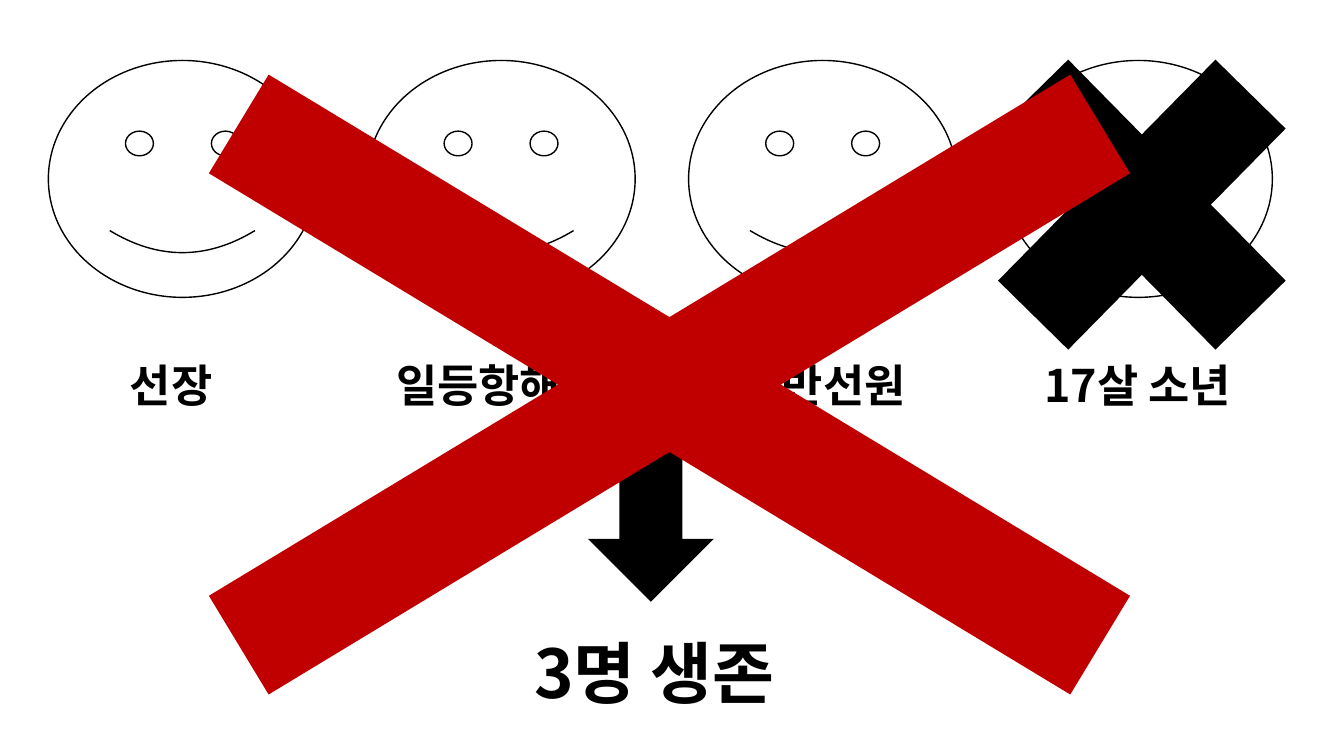
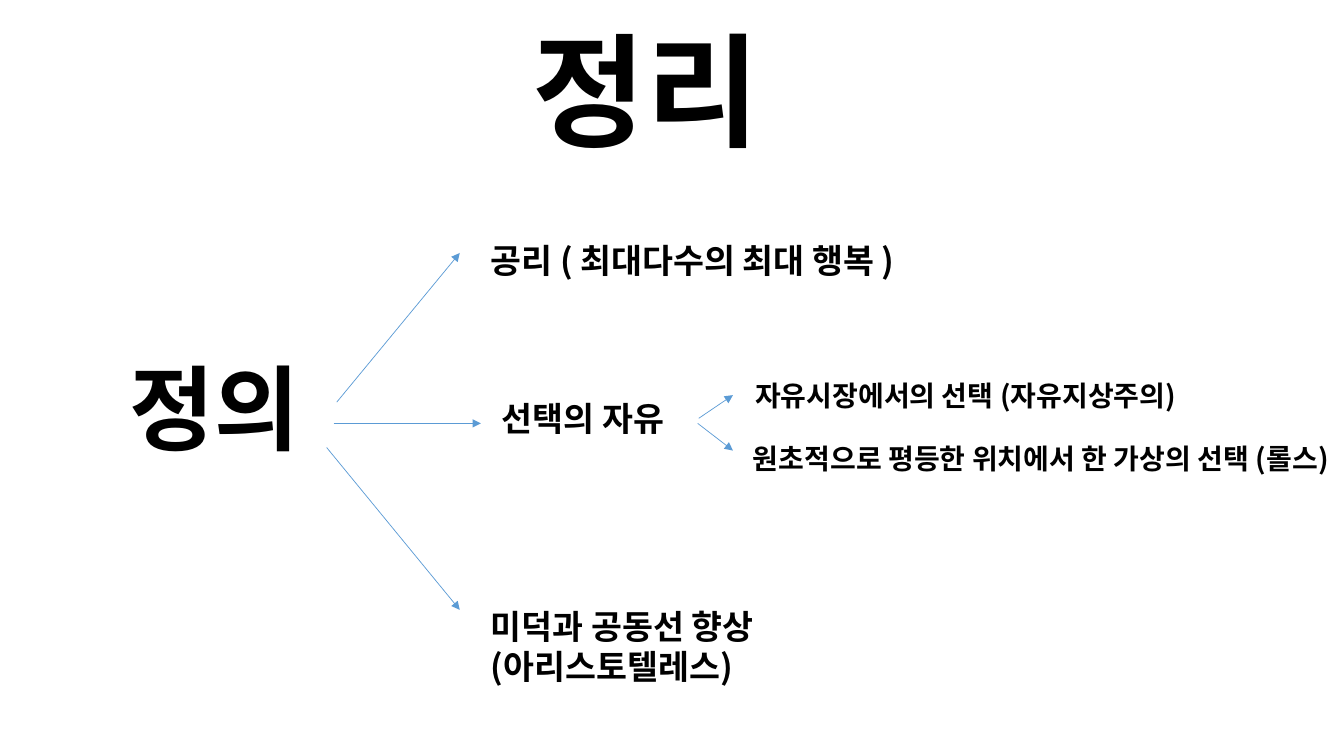
from dataclasses import dataclass

from lxml.etree import SubElement
from pptx import Presentation
from pptx.dml.color import RGBColor
from pptx.enum.shapes import MSO_CONNECTOR, MSO_SHAPE
from pptx.enum.text import MSO_ANCHOR, MSO_AUTO_SIZE, PP_ALIGN
from pptx.oxml.ns import qn
from pptx.util import Inches, Pt

COLORS = {"ink": "000000", "cross": "C00000", "arrow": "5B9BD5"}
FONT = "Noto Sans CJK KR"
TITLE_ONLY, BLANK = 5, 6


@dataclass(frozen=True)
class Box:
    left: float
    top: float
    width: float
    height: float

    def lengths(self) -> list[Inches]:
        return [Inches(value) for value in (self.left, self.top, self.width, self.height)]


@dataclass(frozen=True)
class Label:
    text: str
    box: Box
    size: int
    align: PP_ALIGN = PP_ALIGN.LEFT


@dataclass(frozen=True)
class Person:
    face_left: float
    label: Label


@dataclass(frozen=True)
class Arrow:
    start: tuple[float, float]
    end: tuple[float, float]


def name_label(text: str, left: float, width: float, align: PP_ALIGN = PP_ALIGN.LEFT) -> Label:
    return Label(text, Box(left, 3.5, width, 0.64), 32, align)


CREW = [
    Person(0.48, name_label("선장", 1.19, 1.64)),
    Person(3.64, name_label("일등항해사", 3.83, 2.61)),
    Person(6.83, name_label("일반선원", 7.08, 2.17, PP_ALIGN.CENTER)),
    Person(9.96, name_label("17살 소년", 10.26, 2.35)),
]
SURVIVORS = Label("3명 생존", Box(5.2, 6.21, 5.32, 0.91), 48)

SUMMARY = Label("정리", Box(0.66, 0.24, 11.5, 1.45), 88, PP_ALIGN.CENTER)
JUSTICE = Label("정의", Box(0.15, 3.56, 3.96, 1.22), 66, PP_ALIGN.CENTER)
VIEWS = [
    Label("공리 ( 최대다수의 최대 행복 )", Box(4.77, 2.33, 5.78, 0.5), 24),
    Label("선택의 자유", Box(4.88, 3.9, 2.42, 0.5), 24),
    Label("자유시장에서의 선택 (자유지상주의)", Box(7.39, 3.71, 5.32, 0.44), 20),
    Label("원초적으로 평등한 위치에서 한 가상의 선택 (롤스)", Box(7.37, 4.33, 5.96, 0.77), 20),
    Label("미덕과 공동선 향상 (아리스토텔레스)", Box(4.77, 5.96, 3.32, 0.91), 24),
]
BRANCHES = [
    Arrow((3.34, 3.99), (4.56, 2.51)),
    Arrow((3.31, 4.2), (4.77, 4.2)),
    Arrow((3.24, 4.44), (4.56, 6.05)),
    Arrow((6.93, 4.15), (7.27, 3.92)),
    Arrow((6.92, 4.2), (7.27, 4.47)),
]


def color(name: str) -> RGBColor:
    return RGBColor.from_string(COLORS[name])


def write_text(shape, label: Label):
    """Fill the shape with the label and return its paragraph."""
    frame = shape.text_frame
    frame.text = label.text
    frame.word_wrap = True
    para = frame.paragraphs[0]
    para.alignment = label.align
    for span in para.runs:
        span.font.size = Pt(label.size)
        span.font.bold = True
        span.font.color.rgb = color("ink")
        span.font.name = FONT
        # Korean glyphs take the East Asian typeface
        SubElement(span.font._element, qn("a:ea"), typeface=FONT)
    return para


def add_label(page, label: Label):
    return write_text(page.shapes.add_textbox(*label.box.lengths()), label)


def add_solid(page, kind: MSO_SHAPE, box: Box, fill: str):
    shape = page.shapes.add_shape(kind, *box.lengths())
    shape.shadow.inherit = False
    shape.fill.solid()
    shape.fill.fore_color.rgb = color(fill)
    shape.line.fill.background()
    return shape


def add_face(page, left: float) -> None:
    face = page.shapes.add_shape(MSO_SHAPE.SMILEY_FACE, *Box(left, 0.6, 2.66, 2.35).lengths())
    face.shadow.inherit = False
    face.fill.background()
    face.line.color.rgb = color("ink")
    face.line.width = Pt(1)


def add_arrow(page, arrow: Arrow) -> None:
    ends = [Inches(value) for value in (*arrow.start, *arrow.end)]
    connector = page.shapes.add_connector(MSO_CONNECTOR.STRAIGHT, *ends)
    connector.line.color.rgb = color("arrow")
    connector.line.width = Pt(0.5)
    properties = connector._element.spPr
    SubElement(properties.find(qn("a:ln")), qn("a:tailEnd"), type="triangle")
    SubElement(properties, qn("a:effectLst"))


def build_crew_page(deck) -> None:
    page = deck.slides.add_slide(deck.slide_layouts[BLANK])
    for person in CREW:
        add_face(page, person.face_left)
        add_label(page, person.label)
    add_solid(page, MSO_SHAPE.DOWN_ARROW, Box(5.83, 4.39, 1.25, 1.58), "ink")
    add_solid(page, MSO_SHAPE.MATH_MULTIPLY, Box(9.25, -0.08, 4.15, 4.22), "ink")
    add_label(page, SURVIVORS)
    cross = add_solid(page, MSO_SHAPE.MATH_MULTIPLY, Box(-1.58, -1.16, 16.44, 9.95), "cross")
    cross.adjustments[0] = 0.115


def build_summary_page(deck) -> None:
    page = deck.slides.add_slide(deck.slide_layouts[TITLE_ONLY])
    title = page.shapes.title
    title.left, title.top, title.width, title.height = SUMMARY.box.lengths()
    write_text(title, SUMMARY).line_spacing = 0.9
    title.text_frame.auto_size = MSO_AUTO_SIZE.NONE
    title.text_frame.vertical_anchor = MSO_ANCHOR.MIDDLE

    para = add_label(page, JUSTICE)
    para.line_spacing = 0.9
    para.space_before = Pt(10)
    for arrow in BRANCHES:
        add_arrow(page, arrow)
    for view in VIEWS:
        add_label(page, view)


def main() -> None:
    deck = Presentation()
    deck.slide_width, deck.slide_height = Inches(13.33), Inches(7.5)
    build_crew_page(deck)
    build_summary_page(deck)
    deck.save("out.pptx")


if __name__ == "__main__":
    main()
